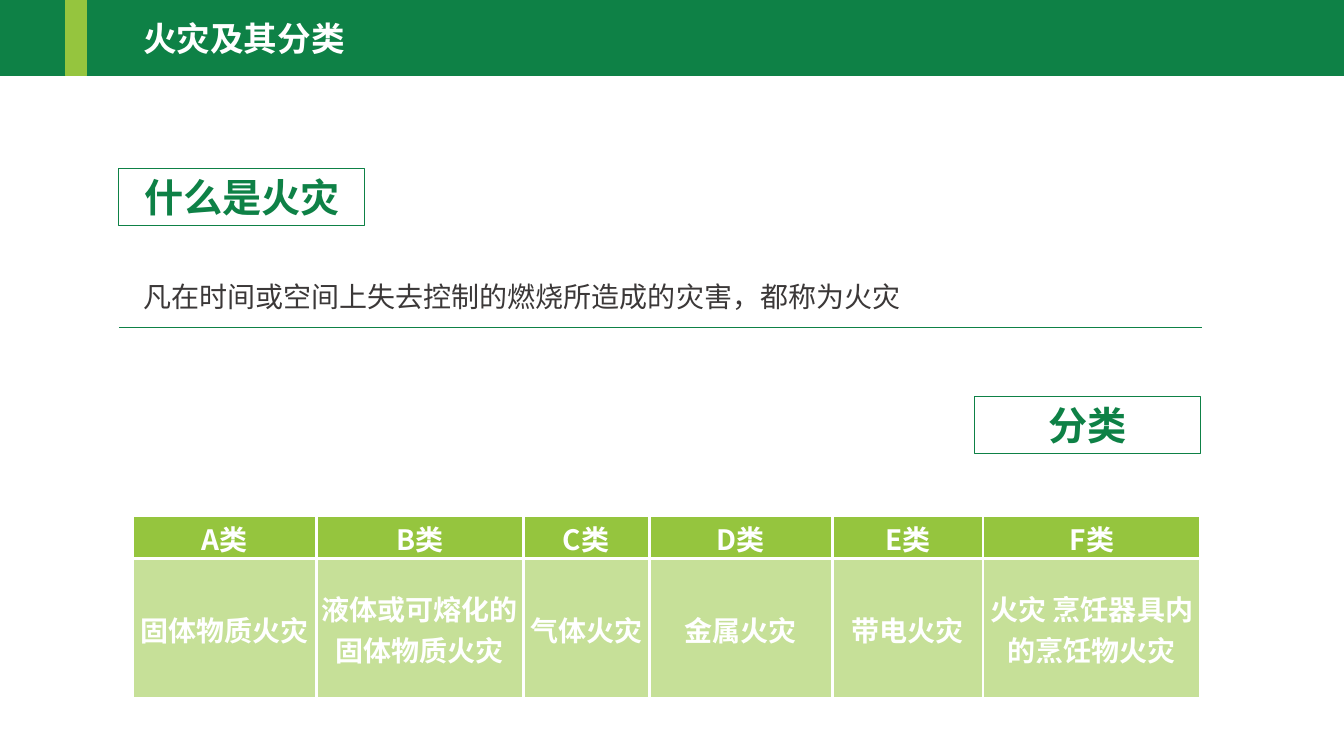
import pptx
import pptx.chart.data
import pptx.dml.color
import pptx.enum.shapes
import pptx.enum.text
import pptx.oxml
import pptx.oxml.ns
import pptx.util
from lxml import etree

# Content
TITLE = "火灾及其分类"
FACT = "凡在时间或空间上失去控制的燃烧所造成的灾害，都称为火灾"
KINDS = [
    ("A类", "固体物质火灾", 1.82),
    ("B类", "液体或可熔化的固体物质火灾", 2.05),
    ("C类", "气体火灾", 1.25),
    ("D类", "金属火灾", 1.82),
    ("E类", "带电火灾", 1.49),
    ("F类", "火灾 烹饪器具内的烹饪物火灾", 2.16),
]
HEADS = [("什么是火灾", 1.18, 1.67, 2.44), ("分类", 9.67, 3.93, 2.24)]
ROWS = (0.42, 1.39)

# Look
FONT = "Noto Sans CJK SC"
HUES = {"green": "0E8146", "lime": "95C53E", "white": "FFFFFF", "ink": "3B3838"}
WIDE, HIGH = 13.33, 7.5
LEFT, RIGHT, TEXT = 1.18, 11.92, 1.32

inch = pptx.util.Inches
align = pptx.enum.text.PP_ALIGN
anchor = pptx.enum.text.MSO_ANCHOR
qn = pptx.oxml.ns.qn


def hue(name):
    return pptx.dml.color.RGBColor.from_string(HUES[name])


def write(frame, text, size=20, color="white", bold=True, side=align.LEFT,
          space=None):
    para = frame.paragraphs[0]
    para.alignment = side
    para.line_spacing = space
    run = para.add_run()
    run.text = text
    font = run.font
    font.size, font.bold, font.name = pptx.util.Pt(size), bold, FONT
    font.color.rgb = hue(color)
    east = etree.SubElement(run._r.get_or_add_rPr(), qn("a:ea"))
    east.set("typeface", FONT)


def box(x, y, w, h, fill=None, line="green", width=1):
    kind = pptx.enum.shapes.MSO_SHAPE.RECTANGLE
    rect = slide.shapes.add_shape(kind, inch(x), inch(y), inch(w), inch(h))
    rect.shadow.inherit = False
    if fill:
        rect.fill.solid()
        rect.fill.fore_color.rgb = hue(fill)
    else:
        rect.fill.background()
    rect.line.color.rgb = hue(line)
    rect.line.width = pptx.util.Pt(width)
    return rect


def label(x, y, w, h, text, wrap=True, **form):
    frame = slide.shapes.add_textbox(inch(x), inch(y), inch(w), inch(h)).text_frame
    frame.word_wrap = wrap
    frame.vertical_anchor = anchor.TOP if wrap else anchor.MIDDLE
    write(frame, text, **form)


def edge(cell, sides):
    props = cell._tc.get_or_add_tcPr()
    for spot, side in enumerate(sides):
        line = etree.Element(qn("a:ln" + side), w=str(pptx.util.Pt(2.25)))
        solid = etree.SubElement(line, qn("a:solidFill"))
        etree.SubElement(solid, qn("a:srgbClr"), val=HUES["white"])
        props.insert(spot, line)


deck = pptx.Presentation()
deck.slide_width, deck.slide_height = inch(WIDE), inch(HIGH)
slide = deck.slides.add_slide(deck.slide_layouts[6])

# Title bar
box(0, 0, WIDE, 0.75, fill="green")
box(0.65, -0.02, 0.21, 0.77, fill="lime", line="lime")
label(TEXT, 0.13, 3.35, 0.5, TITLE, wrap=False, size=24)

# Framed headings
for text, x, y, w in HEADS:
    frame = box(x, y, w, 0.57, width=0.75).text_frame
    frame.vertical_anchor = anchor.TOP
    write(frame, text, size=28, color="green", side=align.CENTER)

# Definition and rule
label(TEXT, 2.56, 7.72, 0.61, FACT, color="ink", bold=False, space=1.5)
rule = slide.shapes.add_connector(
    pptx.enum.shapes.MSO_CONNECTOR.STRAIGHT,
    inch(LEFT), inch(3.25), inch(RIGHT), inch(3.25))
rule.line.color.rgb = hue("green")
rule.line.width = pptx.util.Pt(0.5)
etree.SubElement(rule._element.spPr, qn("a:effectLst"))

# Table of fire classes
table = slide.shapes.add_table(
    len(ROWS), len(KINDS), inch(TEXT), inch(5.12),
    inch(RIGHT - TEXT), inch(sum(ROWS))).table
for r, high in enumerate(ROWS):
    table.rows[r].height = inch(high)
for c, kind in enumerate(KINDS):
    table.columns[c].width = inch(kind[2])
    for r in range(len(ROWS)):
        cell = table.cell(r, c)
        cell.margin_left = cell.margin_right = cell.margin_top = inch(0.01)
        cell.margin_bottom = 0
        cell.vertical_anchor = anchor.MIDDLE
        cell.fill.solid()
        cell.fill.fore_color.rgb = hue("lime")
        if r:
            tint = cell._tc.tcPr.find(".//" + qn("a:srgbClr"))
            etree.SubElement(tint, qn("a:alpha"), val="53000")
        edge(cell, "LRTB" if r else "LRB")
        write(cell.text_frame, kind[r], side=align.CENTER)

deck.save("out.pptx")
